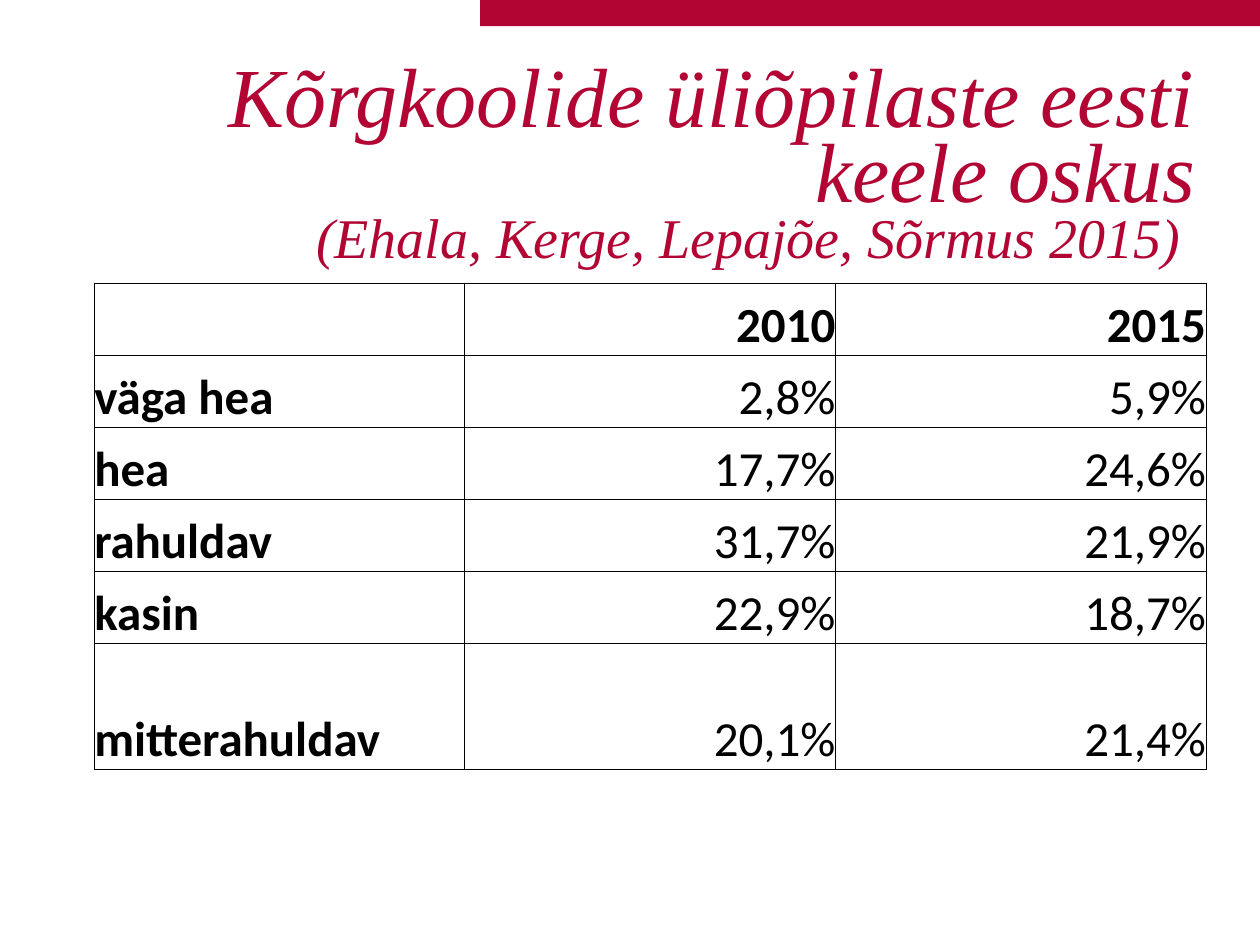
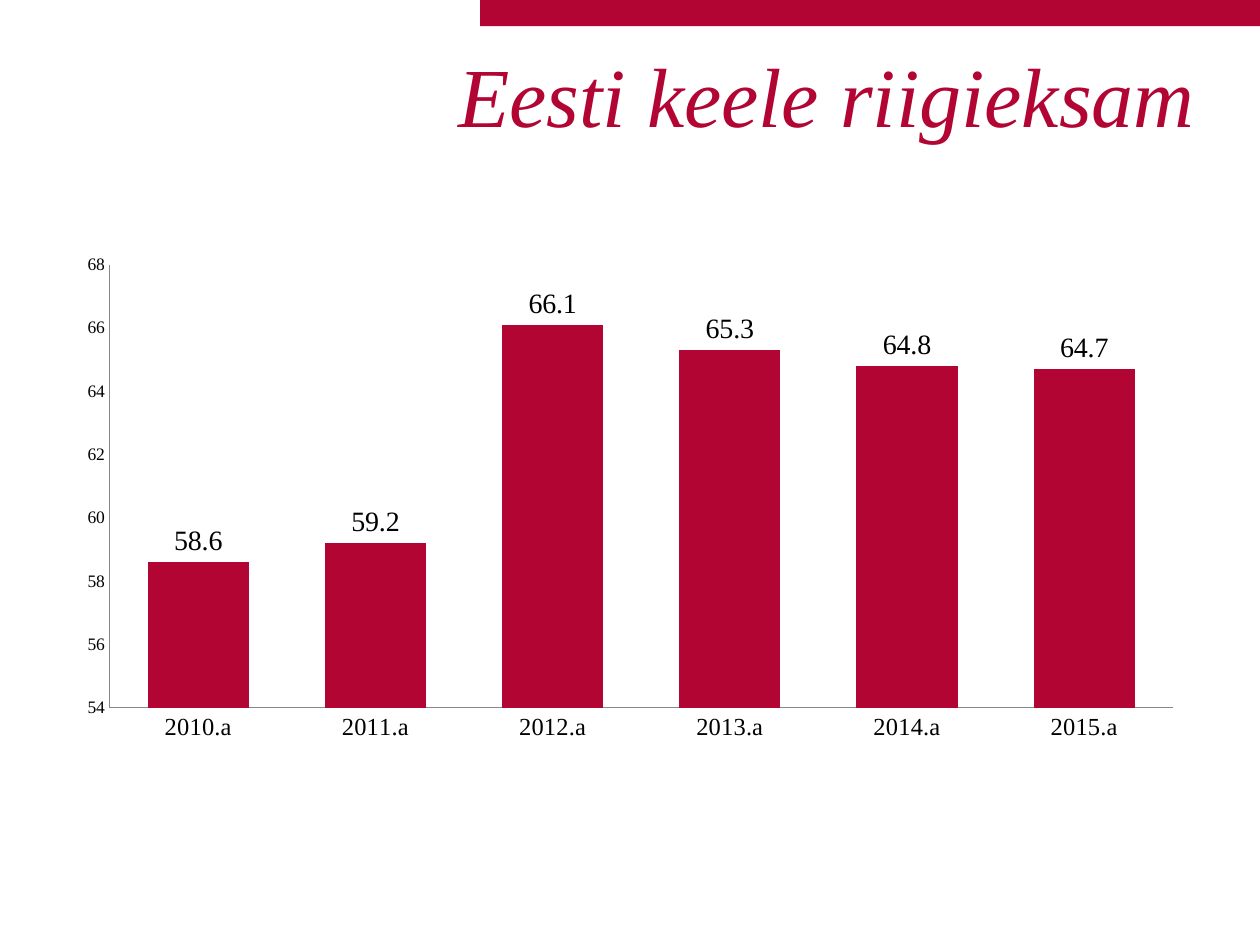
"""Two slides on Estonian language skills: a table of grades and a chart of exam results."""
from lxml import etree
from pptx import Presentation, util as u
from pptx.chart import data
from pptx.dml.color import RGBColor
from pptx.enum import chart as ch, shapes, text
from pptx.oxml import parse_xml
from pptx.oxml.ns import nsdecls, qn

RED, BLACK, GREY = "B20533", "000000", "878787"
SERIF, SANS = "Times New Roman", "Calibri"

SKILLS = [("Kõrgkoolide üliõpilaste eesti keele oskus", 48),
          ("(Ehala, Kerge, Lepajõe, Sõrmus 2015) ", 32)]
GRADES = [
    ("", "2010", "2015"),
    ("väga hea", "2,8%", "5,9%"),
    ("hea", "17,7%", "24,6%"),
    ("rahuldav", "31,7%", "21,9%"),
    ("kasin", "22,9%", "18,7%"),
    ("mitterahuldav", "20,1%", "21,4%"),
]
EXAM = [("Eesti keele riigieksam", 48)]
SCORES = {"2010.a": 58.6, "2011.a": 59.2, "2012.a": 66.1,
          "2013.a": 65.3, "2014.a": 64.8, "2015.a": 64.7}
PLOT = {"x": 0.04, "y": 0.04, "w": 0.94, "h": 0.875}


def rgb(code):
    return RGBColor.from_string(code)


def box(*sizes):
    return [u.Cm(size) for size in sizes]


def style(font, face, size, color=BLACK):
    font.name, font.size = face, u.Pt(size)
    font.color.rgb = rgb(color)


def bare(frame):
    frame.margin_left = frame.margin_right = 0
    frame.margin_top = frame.margin_bottom = 0


def add_page(deck, title):
    page = deck.slides.add_slide(deck.slide_layouts[6])
    band = page.shapes.add_shape(shapes.MSO_SHAPE.RECTANGLE, *box(9.68, 0, 15.72, 0.53))
    band.shadow.inherit = False
    band.fill.solid()
    band.fill.fore_color.rgb = rgb(RED)
    band.line.fill.background()

    frame = page.shapes.add_textbox(*box(1.27, 1.35, 22.83, 3.15)).text_frame
    frame.word_wrap = True
    bare(frame)
    head = frame.paragraphs[0]
    head.text = "\v".join(line for line, _ in title)
    head.alignment = text.PP_ALIGN.RIGHT
    head.line_spacing = 0.75
    for run, (_, size) in zip(head.runs, title):
        style(run.font, SERIF, size, RED)
        run.font.italic = True
    return page


def add_border(cell):
    props = cell._tc.get_or_add_tcPr()
    for side in "LRTB":
        props.append(parse_xml(
            f'<a:ln{side} {nsdecls("a")} w="6350"><a:solidFill>'
            f'<a:srgbClr val="{BLACK}"/></a:solidFill></a:ln{side}>'))


def add_grades(page):
    rows, cols = len(GRADES), len(GRADES[0])
    grid = page.shapes.add_table(rows, cols, *box(1.9, 5.72, 22.4, 9.8)).table
    grid.first_row = grid.horz_banding = False
    for col in grid.columns:
        col.width = u.Cm(7.47)
    for r, row in enumerate(GRADES):
        grid.rows[r].height = u.Cm(2.54 if r == rows - 1 else 1.45)
        for c, word in enumerate(row):
            cell = grid.cell(r, c)
            add_border(cell)
            cell.fill.background()
            bare(cell)
            cell.vertical_anchor = text.MSO_ANCHOR.BOTTOM
            para = cell.text_frame.paragraphs[0]
            para.text = word
            para.alignment = text.PP_ALIGN.RIGHT if c else text.PP_ALIGN.LEFT
            for run in para.runs:
                style(run.font, SANS, 28)
                run.font.bold = r == 0 or c == 0


def set_plot(chart):
    area = chart._chartSpace.chart.plotArea
    for old in area.findall(qn("c:layout")):
        area.remove(old)
    layout = etree.Element(qn("c:layout"))
    manual = etree.SubElement(layout, qn("c:manualLayout"))
    rules = {"layoutTarget": "inner", "xMode": "edge", "yMode": "edge", **PLOT}
    for name, value in rules.items():
        etree.SubElement(manual, qn(f"c:{name}"), val=str(value))
    area.insert(0, layout)


def add_scores(page):
    info = data.CategoryChartData(number_format="General")
    info.categories = list(SCORES)
    info.add_series("Series 1", list(SCORES.values()))
    chart = page.shapes.add_chart(ch.XL_CHART_TYPE.COLUMN_CLUSTERED,
                                  *box(1.3, 4.93, 22.8, 10.21), info).chart
    chart.has_legend = chart.has_title = False
    style(chart.font, SERIF, 10)
    set_plot(chart)

    for axis, size in ((chart.category_axis, 14), (chart.value_axis, 10)):
        axis.has_major_gridlines = False
        axis.major_tick_mark = axis.minor_tick_mark = ch.XL_TICK_MARK.NONE
        axis.format.line.color.rgb = rgb(GREY)
        axis.format.line.width = u.Pt(0.75)
        style(axis.tick_labels.font, SERIF, size)
    scale = chart.value_axis
    scale.minimum_scale, scale.maximum_scale, scale.major_unit = 54, 68, 2

    plot = chart.plots[0]
    plot.gap_width, plot.vary_by_categories = 75, False
    bars = plot.series[0]
    bars.format.fill.solid()
    bars.format.fill.fore_color.rgb = rgb(RED)
    labels = bars.data_labels
    labels.show_value = True
    labels.position = ch.XL_LABEL_POSITION.OUTSIDE_END
    style(labels.font, SERIF, 16)


def main():
    deck = Presentation()
    deck.slide_width, deck.slide_height = box(25.4, 19.05)
    add_grades(add_page(deck, SKILLS))
    add_scores(add_page(deck, EXAM))
    deck.save("out.pptx")


if __name__ == "__main__":
    main()
